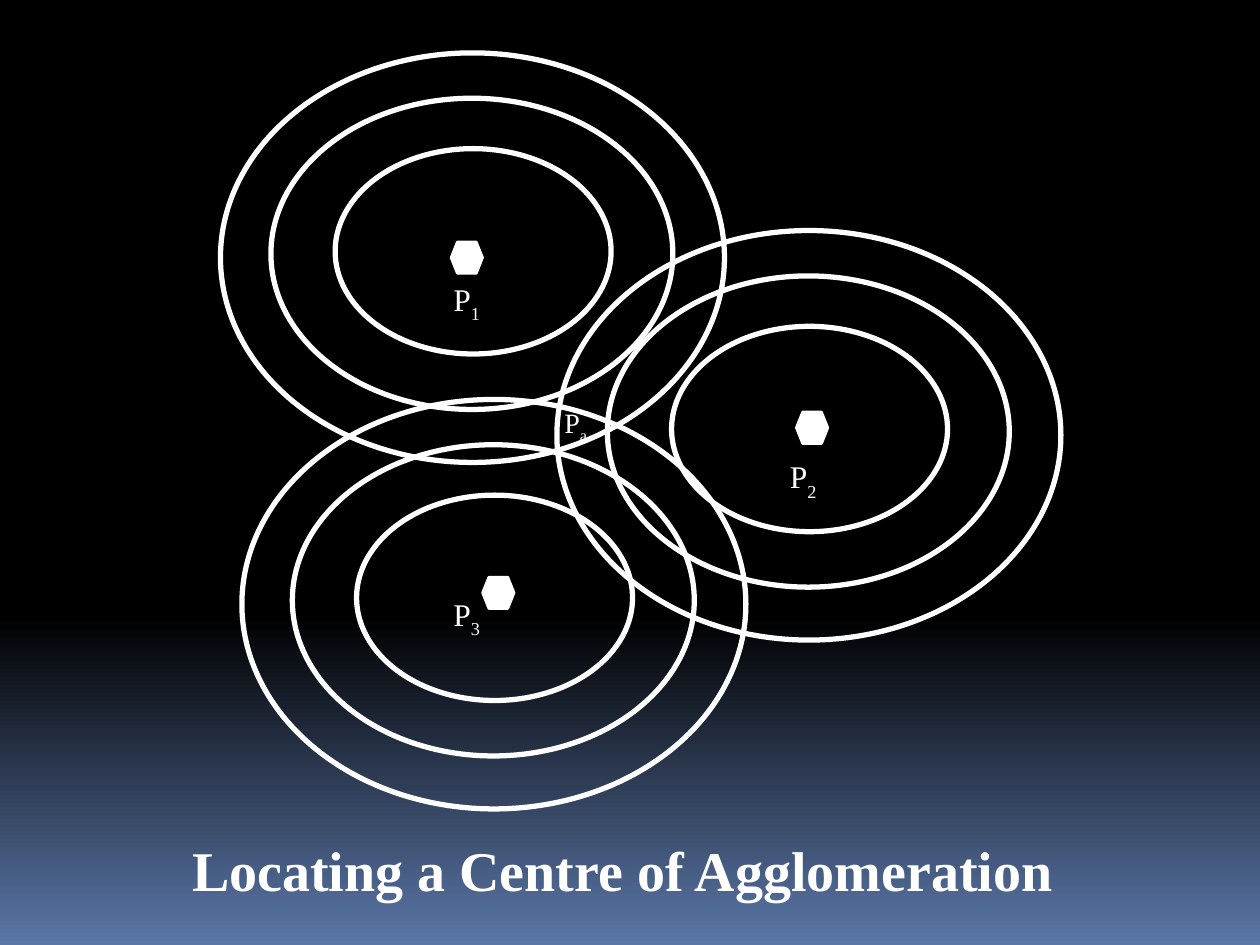
from copy import deepcopy
from dataclasses import dataclass

from pptx import Presentation
from pptx.dml.color import RGBColor
from pptx.enum.shapes import MSO_SHAPE
from pptx.enum.text import MSO_ANCHOR, MSO_AUTO_SIZE, PP_ALIGN
from pptx.util import Inches, Pt

FONT = "Times New Roman"
WHITE = "FFFFFF"
GRADIENT = [(0, "000000"), (0.65, "000000"), (1, "5B77A8")]
RINGS = [(0, 0, 4, 3.25), (0.4, 0.36, 3.19, 2.47), (0.91, 0.76, 2.19, 1.63)]
MARKER_SIZE = 0.25


@dataclass
class Box:
    """A rectangle in inches that places parts relative to its corner."""
    left: float
    top: float
    width: float
    height: float

    def inner(self, left, top, width, height):
        """Return a box offset from this one's corner."""
        return Box(self.left + left, self.top + top, width, height)

    def lengths(self):
        """Return the position and size as slide lengths."""
        return [Inches(value) for value in (self.left, self.top, self.width, self.height)]


def color(hex_string):
    """Turn a hex string into a colour."""
    return RGBColor.from_string(hex_string)


def paint_background(slide):
    """Fade the slide from black to blue at the foot."""
    fill = slide.background.fill
    fill.gradient()
    fill.gradient_angle = 270
    stop_list = slide._element.xpath(".//a:gsLst")[0]
    stop_list.insert(0, deepcopy(stop_list[0]))
    for stop, (position, hex_string) in zip(fill.gradient_stops, GRADIENT):
        stop.position = position
        stop.color.rgb = color(hex_string)


def add_run(paragraph, text, size, bold=False, subscript=False):
    """Append one white run to a paragraph."""
    run = paragraph.add_run()
    run.text = text
    run.font.name = FONT
    run.font.size = Pt(size)
    run.font.bold = bold
    run.font.color.rgb = color(WHITE)
    if subscript:
        run.font._element.set("baseline", "-30000")


def add_outline(slide, kind, box, line_width, filled=False):
    """Draw a white outlined shape, filled or hollow."""
    shape = slide.shapes.add_shape(kind, *box.lengths())
    shape.shadow.inherit = False
    shape.line.color.rgb = color(WHITE)
    shape.line.width = Pt(line_width)
    if filled:
        shape.fill.solid()
        shape.fill.fore_color.rgb = color(WHITE)
    else:
        shape.fill.background()


def add_label(slide, box, subscript, size):
    """Write the letter P with a subscript."""
    frame = slide.shapes.add_textbox(*box.lengths()).text_frame
    frame.word_wrap = False
    frame.auto_size = MSO_AUTO_SIZE.SHAPE_TO_FIT_TEXT
    paragraph = frame.paragraphs[0]
    add_run(paragraph, "P", size)
    add_run(paragraph, subscript, size, subscript=True)


def add_site(slide, box, subscript, marker, label):
    """Draw one site: its three rings, its marker and its label."""
    for ring in RINGS:
        add_outline(slide, MSO_SHAPE.OVAL, box.inner(*ring), 3)
    marker_box = box.inner(*marker, MARKER_SIZE, MARKER_SIZE)
    add_outline(slide, MSO_SHAPE.FLOWCHART_PREPARATION, marker_box, 1.5, filled=True)
    add_label(slide, box.inner(*label, 0.43, 0.4), subscript, 18)


def add_title(slide, box):
    """Place and format the title at the foot of the slide."""
    title = slide.shapes.title
    title.left, title.top, title.width, title.height = box.lengths()
    frame = title.text_frame
    frame.word_wrap = True
    frame.auto_size = MSO_AUTO_SIZE.NONE
    frame.vertical_anchor = MSO_ANCHOR.TOP
    paragraph = frame.paragraphs[0]
    paragraph.alignment = PP_ALIGN.CENTER
    add_run(paragraph, "Locating a Centre of Agglomeration ", 32, bold=True)


def main():
    """Build and save the slide."""
    presentation = Presentation()
    presentation.slide_width = Inches(10)
    presentation.slide_height = Inches(7.5)
    slide = presentation.slides.add_slide(presentation.slide_layouts[5])
    paint_background(slide)
    sites = [
        ("1", (1.75, 0.42), (1.83, 1.5), (1.75, 1.75)),
        ("2", (4.42, 1.83), (1.9, 1.44), (1.75, 1.75)),
        ("3", (1.92, 3.17), (1.91, 1.41), (1.58, 1.5)),
    ]
    for subscript, corner, marker, label in sites:
        add_site(slide, Box(*corner, 4, 3.25), subscript, marker, label)
    add_label(slide, Box(4.38, 3.17, 0.39, 0.37), "a", 16)
    add_title(slide, Box(0, 6.58, 10, 0.64))
    presentation.save("out.pptx")


if __name__ == "__main__":
    main()
